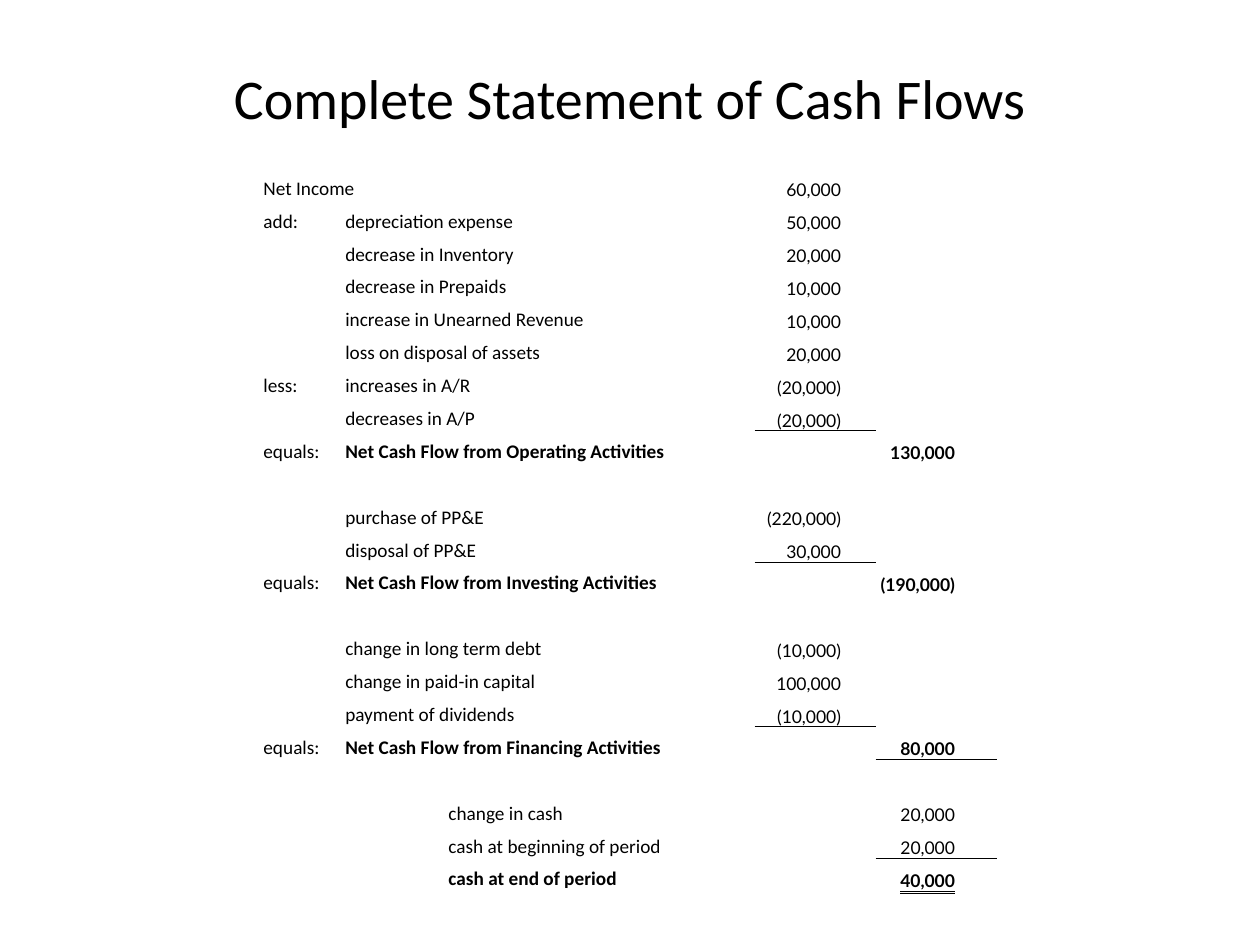
import lxml.etree
import pptx
import pptx.dml.color
import pptx.enum.text
import pptx.oxml.ns
import pptx.util
from pptx.util import Cm

TITLE = "Complete Statement of Cash Flows"

# Each row: texts as {column: text}, then its marks:
# "total" is bold, "rule" draws a line under the amount, "double" underlines it twice
ROWS = [
    ({0: "Net Income", 3: "60,000"}, ()),
    ({0: "add:", 1: "depreciation expense", 3: "50,000"}, ()),
    ({1: "decrease in Inventory", 3: "20,000"}, ()),
    ({1: "decrease in Prepaids", 3: "10,000"}, ()),
    ({1: "increase in Unearned Revenue", 3: "10,000"}, ()),
    ({1: "loss on disposal of assets", 3: "20,000"}, ()),
    ({0: "less:", 1: "increases in A/R", 3: "(20,000)"}, ()),
    ({1: "decreases in A/P", 3: "(20,000)"}, ("rule",)),
    ({0: "equals:", 1: "Net Cash Flow from Operating Activities", 4: "130,000"}, ("total",)),
    ({}, ()),
    ({1: "purchase of PP&E", 3: "(220,000)"}, ()),
    ({1: "disposal of PP&E", 3: "30,000"}, ("rule",)),
    ({0: "equals:", 1: "Net Cash Flow from Investing Activities", 4: "(190,000)"}, ("total",)),
    ({}, ()),
    ({1: "change in long term debt", 3: "(10,000)"}, ()),
    ({1: "change in paid-in capital", 3: "100,000"}, ()),
    ({1: "payment of dividends", 3: "(10,000)"}, ("rule",)),
    ({0: "equals:", 1: "Net Cash Flow from Financing Activities", 4: "80,000"}, ("total", "rule")),
    ({}, ()),
    ({2: "change in cash", 4: "20,000"}, ()),
    ({2: "cash at beginning of period", 4: "20,000"}, ("rule",)),
    ({2: "cash at end of period", 4: "40,000"}, ("total", "double")),
]

THEME = {
    "ink": pptx.dml.color.RGBColor(0, 0, 0),
    "label_font": "Calibri",
    "amount_font": "Lato",
    "title_size": pptx.util.Pt(32),
    "label_size": pptx.util.Pt(11),
    "amount_size": pptx.util.Pt(10),
    "rule_width": pptx.util.Pt(0.5),
}

COLUMN_WIDTHS = [1.65, 2.08, 6.2, 2.44, 2.44]
AMOUNT_INSETS = {3: 0.7, 4: 0.84}  # space to the right of the amounts
TABLE_LEFT, TABLE_TOP, TABLE_HEIGHT = 5.28, 3.38, 14.6
PLAIN_TABLE_STYLE = "{2D5ABB26-0587-4C30-8999-92F81FD0307C}"


def add_run(paragraph, text, font_name, size, bold=False):
    run = paragraph.add_run()
    run.text = text
    run.font.name = font_name
    run.font.size = size
    run.font.bold = bold
    run.font.color.rgb = THEME["ink"]
    return run


def prepare_cell(cell, column):
    cell.fill.background()
    cell.vertical_anchor = pptx.enum.text.MSO_ANCHOR.BOTTOM
    cell.margin_left = cell.margin_top = Cm(0.03)
    cell.margin_right = Cm(AMOUNT_INSETS.get(column, 0.03))
    cell.margin_bottom = 0
    # Keeps empty cells from stretching their row
    paragraph_element = cell.text_frame.paragraphs[0]._p
    end_properties = lxml.etree.SubElement(paragraph_element, pptx.oxml.ns.qn("a:endParaRPr"))
    end_properties.set("sz", str(int(THEME["amount_size"].pt * 100)))


def add_bottom_rule(cell):
    qn = pptx.oxml.ns.qn
    properties = cell._tc.get_or_add_tcPr()
    line = lxml.etree.Element(qn("a:lnB"), w=str(THEME["rule_width"]))
    fill = lxml.etree.SubElement(line, qn("a:solidFill"))
    lxml.etree.SubElement(fill, qn("a:srgbClr"), val=str(THEME["ink"]))
    properties.insert(0, line)


def add_title(slide):
    box = slide.shapes.add_textbox(Cm(1.27), Cm(0.76), Cm(22.86), Cm(2.41))
    frame = box.text_frame
    frame.word_wrap = True
    frame.vertical_anchor = pptx.enum.text.MSO_ANCHOR.MIDDLE
    paragraph = frame.paragraphs[0]
    paragraph.alignment = pptx.enum.text.PP_ALIGN.CENTER
    add_run(paragraph, TITLE, THEME["label_font"], THEME["title_size"])


def fill_row(table, row, texts, marks):
    for column in range(len(COLUMN_WIDTHS)):
        prepare_cell(table.cell(row, column), column)

    # Line names take two columns, and so does a heading that stands alone
    if 1 in texts:
        table.cell(row, 1).merge(table.cell(row, 2))
    elif 0 in texts:
        table.cell(row, 0).merge(table.cell(row, 1))

    for column, text in texts.items():
        cell = table.cell(row, column)
        paragraph = cell.text_frame.paragraphs[0]
        bold = "total" in marks and column > 0
        if column not in AMOUNT_INSETS:
            add_run(paragraph, text, THEME["label_font"], THEME["label_size"], bold)
            continue
        paragraph.alignment = pptx.enum.text.PP_ALIGN.RIGHT
        run = add_run(paragraph, text, THEME["amount_font"], THEME["amount_size"], bold)
        if "double" in marks:
            run.font.underline = pptx.enum.text.MSO_UNDERLINE.DOUBLE_LINE
        if "rule" in marks:
            add_bottom_rule(cell)


def add_statement(slide):
    frame = slide.shapes.add_table(
        len(ROWS), len(COLUMN_WIDTHS), Cm(TABLE_LEFT), Cm(TABLE_TOP),
        Cm(sum(COLUMN_WIDTHS)), Cm(TABLE_HEIGHT))
    table = frame.table
    table.first_row = table.horz_banding = False
    table._tbl.tblPr.find(pptx.oxml.ns.qn("a:tableStyleId")).text = PLAIN_TABLE_STYLE
    for column, width in zip(table.columns, COLUMN_WIDTHS):
        column.width = Cm(width)
    for row, (texts, marks) in enumerate(ROWS):
        table.rows[row].height = Cm(TABLE_HEIGHT / len(ROWS))
        fill_row(table, row, texts, marks)


def main():
    presentation = pptx.Presentation()
    presentation.slide_width, presentation.slide_height = Cm(25.4), Cm(19.05)
    slide = presentation.slides.add_slide(presentation.slide_layouts[6])
    add_title(slide)
    add_statement(slide)
    presentation.save("out.pptx")


if __name__ == "__main__":
    main()
